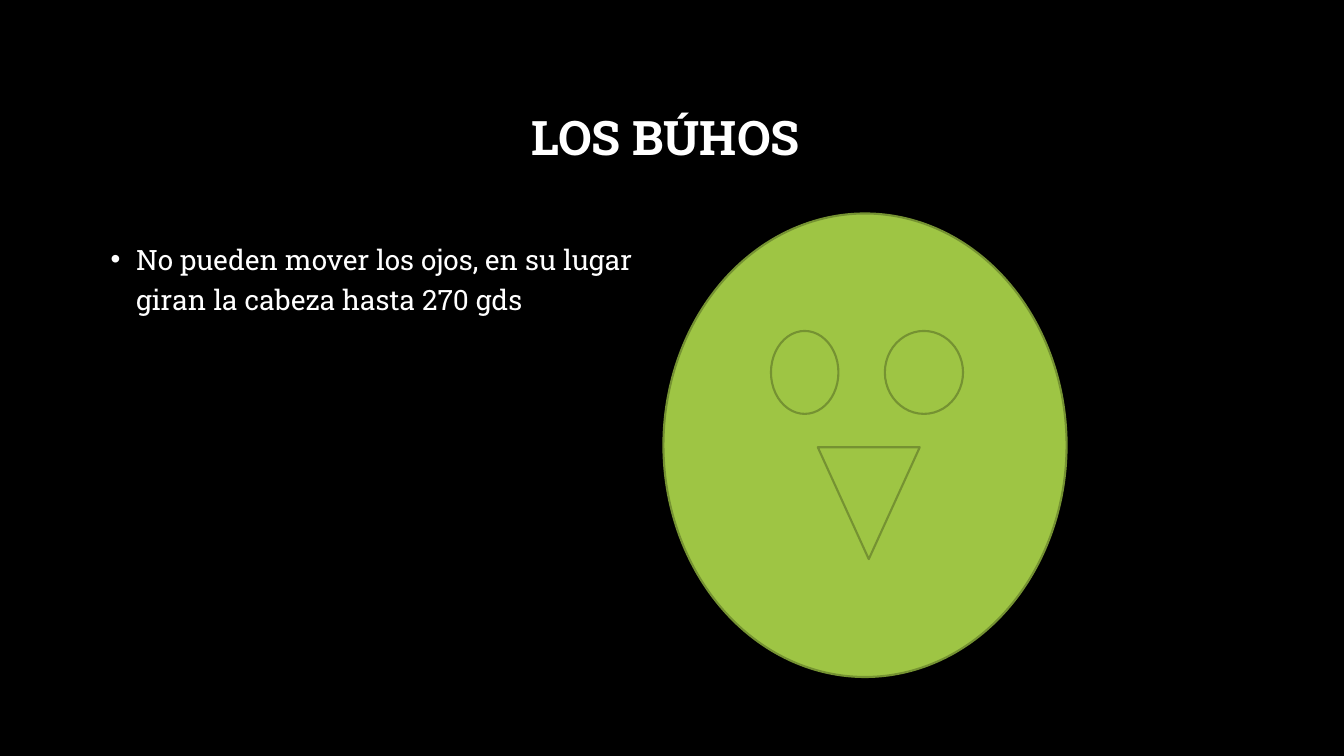
"""Build a slide about owls with a bullet and a simple owl face."""
from lxml import etree
from pptx import Presentation
from pptx import util as u
from pptx.dml.color import RGBColor
from pptx.enum import shapes, text
from pptx.oxml.ns import qn

COLORS = {"night": "000000", "words": "FFFFFF", "owl": "9EC544", "outline": "759232"}


def color(name):
    return RGBColor.from_string(COLORS[name])


def add_span(para, words, size, bold=False):
    span = para.add_run()
    span.text = words
    span.font.name = "Roboto Slab"
    span.font.size = u.Pt(size)
    span.font.bold = bold
    span.font.color.rgb = color("words")


deck = Presentation()
deck.slide_width, deck.slide_height = u.Cm(33.87), u.Cm(19.05)
page = deck.slides.add_slide(deck.slide_layouts[5])
page.background.fill.solid()
page.background.fill.fore_color.rgb = color("night")

title = page.shapes.title
title.left, title.top, title.width, title.height = u.Cm(2.54), u.Cm(1.7), u.Cm(28.75), u.Cm(3.68)
title.text_frame.auto_size = text.MSO_AUTO_SIZE.NONE
title.text_frame.vertical_anchor = text.MSO_ANCHOR.MIDDLE
para = title.text_frame.paragraphs[0]
para.alignment = text.PP_ALIGN.CENTER
para.line_spacing = 0.9
add_span(para, "LOS BÚHOS ", 34, bold=True)

box = page.shapes.add_textbox(u.Cm(2.54), u.Cm(5.81), u.Cm(14.17), u.Cm(10.29))
box.text_frame.word_wrap = True
para = box.text_frame.paragraphs[0]
para.line_spacing = 1.2
para.space_before = u.Pt(10)
add_span(para, "No pueden mover los ojos, en su lugar giran la cabeza hasta 270 gds", 20)
props = para._p.get_or_add_pPr()
indent = u.Cm(0.64)
props.set("marL", str(indent))
props.set("indent", str(-indent))
etree.SubElement(props, qn("a:buFont")).set("typeface", "Arial")
etree.SubElement(props, qn("a:buChar")).set("char", "•")

OVAL, MERGE = shapes.MSO_SHAPE.OVAL, shapes.MSO_SHAPE.FLOWCHART_MERGE
head = (OVAL, 16.72, 5.38, 10.16, 11.68)
left_eye = (OVAL, 19.43, 8.34, 1.7, 2.09)
right_eye = (OVAL, 22.3, 8.34, 1.97, 2.09)
beak = (MERGE, 20.61, 11.27, 2.57, 2.82)
for kind, *place in (head, left_eye, right_eye, beak):
    part = page.shapes.add_shape(kind, *[u.Cm(length) for length in place])
    part.shadow.inherit = False
    part.fill.solid()
    part.fill.fore_color.rgb = color("owl")
    part.line.color.rgb = color("outline")
    part.line.width = u.Pt(1.5)

deck.save("out.pptx")
